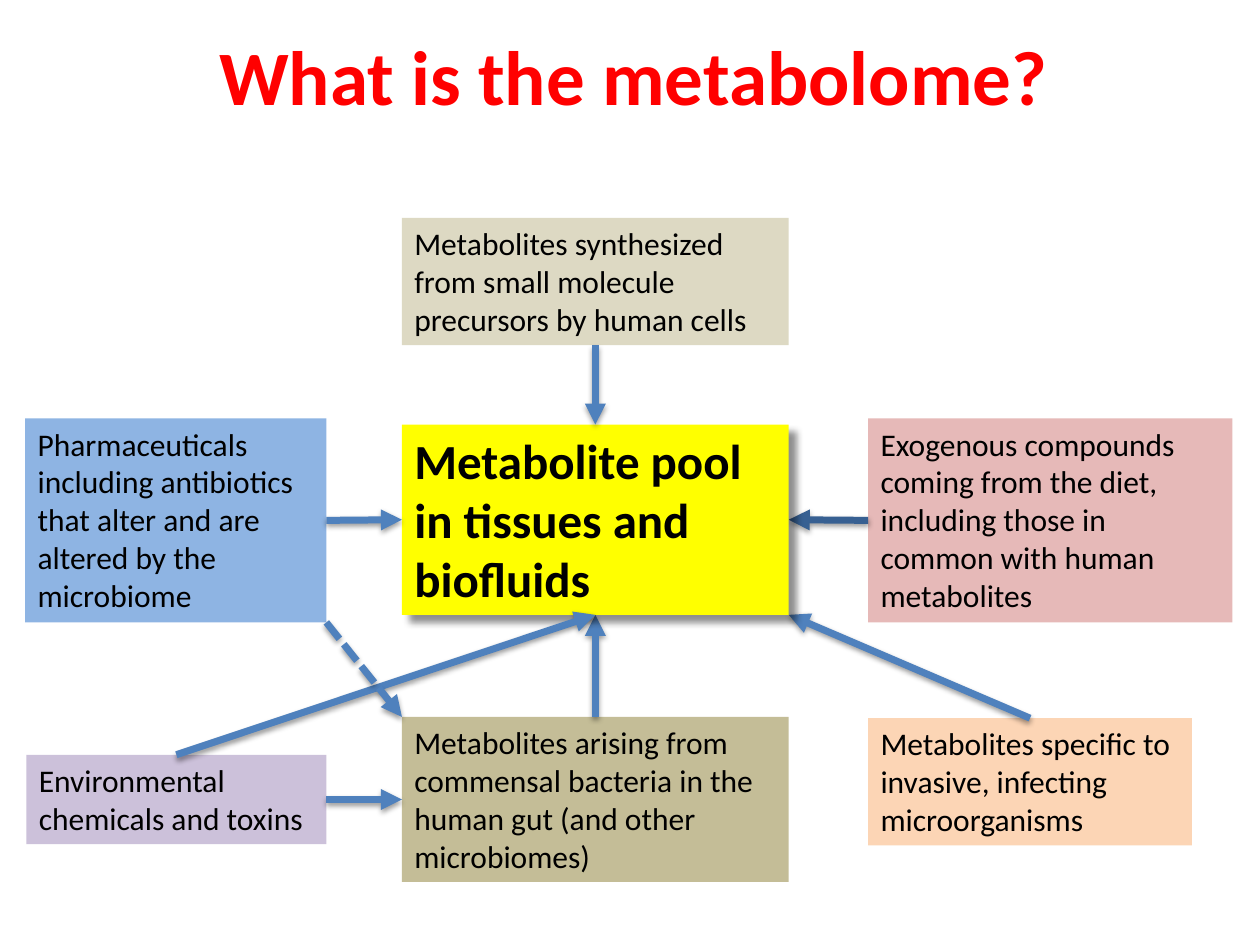
from collections import namedtuple

from lxml.etree import SubElement
from pptx import Presentation
from pptx.dml.color import RGBColor
from pptx.enum.shapes import MSO_CONNECTOR as Connector, MSO_SHAPE as Shape
from pptx.enum.text import MSO_ANCHOR as Anchor, MSO_AUTO_SIZE as AutoSize, PP_ALIGN as Align
from pptx.oxml.ns import qn
from pptx.util import Inches, Pt

FONT = "Calibri"
BLACK = RGBColor(0x00, 0x00, 0x00)
RED = RGBColor(0xFF, 0x00, 0x00)
YELLOW = RGBColor(0xFF, 0xFF, 0x00)
OLIVE = RGBColor(0xC4, 0xBD, 0x97)
SAND = RGBColor(0xDD, 0xD9, 0xC3)
ROSE = RGBColor(0xE6, 0xB9, 0xB8)
PEACH = RGBColor(0xFC, 0xD5, 0xB5)
LILAC = RGBColor(0xCC, 0xC1, 0xDA)
SKY = RGBColor(0x8E, 0xB4, 0xE3)
BLUE = RGBColor(0x4F, 0x81, 0xBD)
NAVY = RGBColor(0x37, 0x60, 0x92)

# Column positions and the width of the middle column, in inches
MIDDLE, RIGHT, MIDDLE_WIDTH = 3.19, 6.89, 3.07

Source = namedtuple("Source", "left top width height fill text")
POOL = Source(MIDDLE, 3.37, MIDDLE_WIDTH, 1.51, YELLOW,
              "Metabolite pool in tissues and biofluids")
BACTERIA = Source(MIDDLE, 5.69, MIDDLE_WIDTH, 1.31, OLIVE,
                  "Metabolites arising from commensal bacteria in the human gut "
                  "(and other microbiomes)")
DIET = Source(RIGHT, 3.32, 2.89, 1.62, ROSE,
              "Exogenous compounds coming from the diet, including those in "
              "common with human metabolites")
INFECTION = Source(RIGHT, 5.7, 2.57, 1.01, PEACH,
                   "Metabolites specific to invasive, infecting microorganisms")
CELLS = Source(MIDDLE, 1.73, MIDDLE_WIDTH, 1.01, SAND,
               "Metabolites synthesized from small molecule precursors by human cells")
TOXINS = Source(0.21, 5.99, 2.38, 0.71, LILAC, "Environmental chemicals and toxins")
DRUGS = Source(0.2, 3.32, 2.39, 1.62, SKY,
               "Pharmaceuticals including antibiotics that alter and are altered "
               "by the microbiome")

# Places on a box, as fractions of its width and height
TOP, BOTTOM = (0.5, 0), (0.5, 1)
LEFT_SIDE, RIGHT_SIDE = (0, 0.5), (1, 0.5)
TOP_LEFT, BOTTOM_RIGHT = (0, 0), (1, 1)


def write_text(frame, text, size=18, color=BLACK, bold=False, align=Align.LEFT,
               anchor=Anchor.TOP):
    frame.word_wrap = True
    frame.vertical_anchor = anchor
    para = frame.paragraphs[0]
    para.alignment = align
    span = para.add_run()
    span.text = text
    span.font.name = FONT
    span.font.size = Pt(size)
    span.font.bold = bold
    span.font.color.rgb = color


def add_shadow(properties, opacity, blur, distance, angle):
    effects = properties.find(qn("a:effectLst"))
    if effects is None:
        effects = SubElement(properties, qn("a:effectLst"))
    shadow = SubElement(effects, qn("a:outerShdw"), blurRad=str(Pt(blur)),
                        dist=str(Pt(distance)), dir=str(angle * 60000),
                        algn="tl", rotWithShape="0")
    color = SubElement(shadow, qn("a:srgbClr"), val=str(BLACK))
    SubElement(color, qn("a:alpha"), val=str(opacity * 1000))


def add_title(page, text):
    box = page.shapes.add_textbox(Inches(0.53), Inches(-0.03), Inches(9), Inches(1.25))
    write_text(box.text_frame, text, size=44, color=RED, bold=True,
               align=Align.CENTER, anchor=Anchor.MIDDLE)


def add_box(page, source, **text_format):
    box = page.shapes.add_shape(Shape.RECTANGLE, *(Inches(n) for n in source[:4]))
    box.shadow.inherit = False
    box.fill.solid()
    box.fill.fore_color.rgb = source.fill
    box.line.fill.background()
    write_text(box.text_frame, source.text, **text_format)
    box.text_frame.auto_size = AutoSize.SHAPE_TO_FIT_TEXT
    return box


def point_on(source, place):
    return (Inches(source.left + source.width * place[0]),
            Inches(source.top + source.height * place[1]))


def add_arrow(page, start, start_place, end, end_place, color=BLUE, dashed=False):
    arrow = page.shapes.add_connector(Connector.STRAIGHT, *point_on(start, start_place),
                                      *point_on(end, end_place))
    arrow.line.width = Pt(4)
    arrow.line.color.rgb = color
    outline = arrow.line._get_or_add_ln()
    if dashed:
        SubElement(outline, qn("a:prstDash"), val="sysDash")
    SubElement(outline, qn("a:tailEnd"), type="triangle")
    add_shadow(arrow._element.spPr, 38, 3.1, 1.6, 90)


def main():
    deck = Presentation()
    deck.slide_width, deck.slide_height = Inches(10), Inches(7.5)
    page = deck.slides.add_slide(deck.slide_layouts[6])
    add_title(page, "What is the metabolome?")

    # Sources whose arrows lie behind the pool
    for source in (BACTERIA, DIET, INFECTION):
        add_box(page, source)
    add_arrow(page, BACTERIA, TOP, POOL, BOTTOM)
    add_arrow(page, DIET, LEFT_SIDE, POOL, RIGHT_SIDE, color=NAVY)
    add_arrow(page, INFECTION, TOP, POOL, BOTTOM_RIGHT)

    # Central pool
    pool = add_box(page, POOL, size=28, bold=True)
    add_shadow(pool._element.spPr, 43, 4, 6, 45)

    # Sources whose arrows lie in front of the pool
    for source in (CELLS, TOXINS, DRUGS):
        add_box(page, source)
    add_arrow(page, CELLS, BOTTOM, POOL, TOP)
    add_arrow(page, TOXINS, RIGHT_SIDE, BACTERIA, LEFT_SIDE)
    add_arrow(page, TOXINS, TOP, POOL, BOTTOM)
    add_arrow(page, DRUGS, RIGHT_SIDE, POOL, LEFT_SIDE)
    add_arrow(page, DRUGS, BOTTOM_RIGHT, BACTERIA, TOP_LEFT, dashed=True)

    deck.save("out.pptx")


if __name__ == "__main__":
    main()
